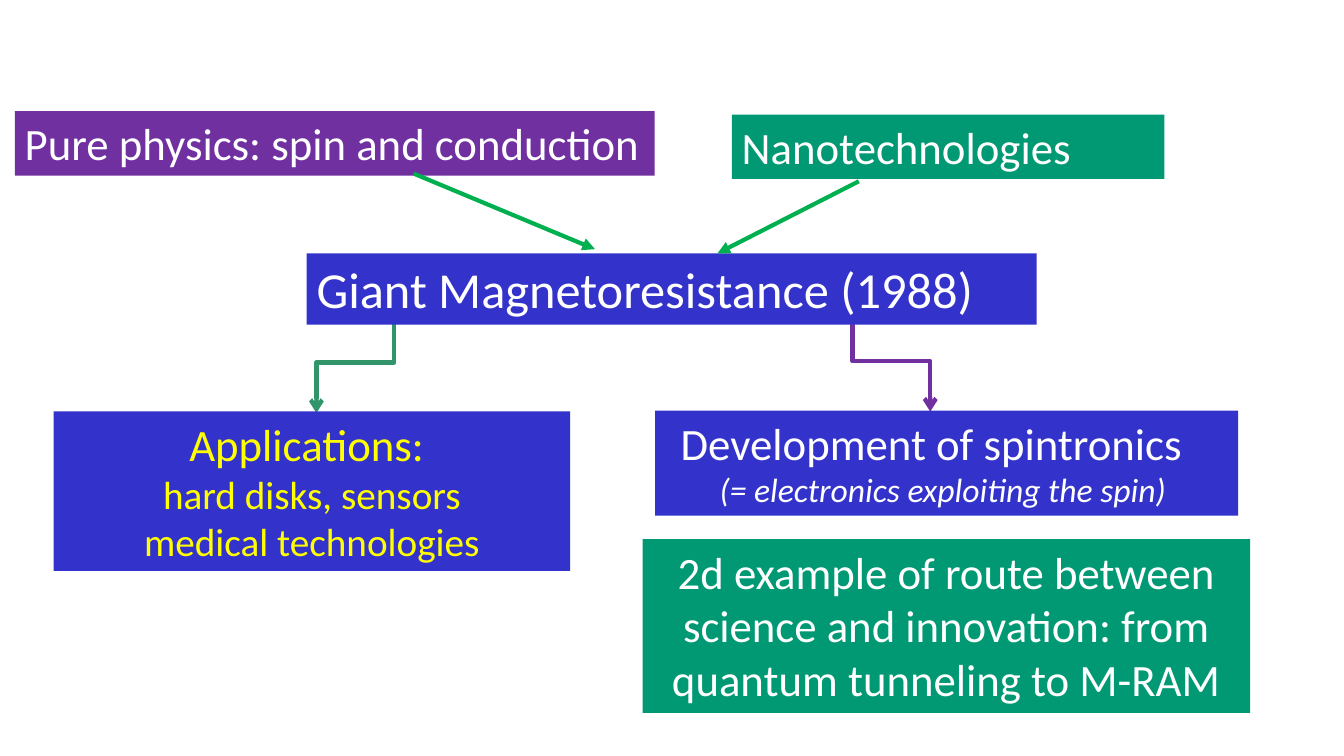
from dataclasses import dataclass

from lxml.etree import SubElement
from pptx import Presentation
from pptx.dml.color import RGBColor
from pptx.enum.shapes import MSO_CONNECTOR
from pptx.enum.text import MSO_AUTO_SIZE, PP_ALIGN
from pptx.oxml.ns import qn
from pptx.util import Pt


@dataclass(frozen=True)
class Theme:
    font: str = "Calibri"
    blue: str = "3333CC"
    purple: str = "7030A0"
    teal: str = "009973"
    sea_green: str = "32946A"
    bright_green: str = "00B050"
    white: str = "FFFFFF"
    yellow: str = "FFFF00"
    topic_size: int = 36
    heading_size: int = 32
    detail_size: int = 28
    note_size: int = 24
    line_width: int = 3


THEME = Theme()


def add_box(slide, left, top, width, height, fill, right_margin=7.2):
    shape = slide.shapes.add_textbox(Pt(left), Pt(top), Pt(width), Pt(height))
    shape.fill.solid()
    shape.fill.fore_color.rgb = RGBColor.from_string(fill)
    shape.text_frame.word_wrap = True
    shape.text_frame.auto_size = MSO_AUTO_SIZE.SHAPE_TO_FIT_TEXT
    shape.text_frame.margin_right = Pt(right_margin)
    return shape.text_frame


def write(frame, text, size=THEME.heading_size, color=THEME.white,
          italic=False, align=PP_ALIGN.CENTER, indent=0):
    paragraph = frame.paragraphs[-1]
    if paragraph.runs:
        paragraph = frame.add_paragraph()
    paragraph.alignment = align
    if indent:
        properties = paragraph._p.get_or_add_pPr()
        properties.set("marL", str(Pt(indent)))
        properties.set("indent", "0")
    run = paragraph.add_run()
    run.text = text
    run.font.name = THEME.font
    run.font.size = Pt(size)
    run.font.italic = italic
    run.font.color.rgb = RGBColor.from_string(color)


def style_connector(connector, color, head):
    connector.line.width = Pt(THEME.line_width)
    connector.line.color.rgb = RGBColor.from_string(color)
    SubElement(connector.line._get_or_add_ln(), qn("a:tailEnd"), type=head)
    SubElement(connector._element.spPr, qn("a:effectLst"))


def add_arrow(slide, start, end, color):
    connector = slide.shapes.add_connector(
        MSO_CONNECTOR.STRAIGHT, *map(Pt, start + end))
    style_connector(connector, color, "triangle")


def add_step_arrow(slide, start, end, color):
    across, down = end[0] - start[0], end[1] - start[1]
    center_x, center_y = (start[0] + end[0]) / 2, (start[1] + end[1]) / 2
    half_length, half_height = down / 2, abs(across) / 2
    if across > 0:
        half_length = -half_length
    connector = slide.shapes.add_connector(
        MSO_CONNECTOR.ELBOW,
        Pt(center_x - half_length), Pt(center_y - half_height),
        Pt(center_x + half_length), Pt(center_y + half_height))
    rotation = 270 if across > 0 else 90
    connector._element.spPr.xfrm.set("rot", str(rotation * 60000))
    style_connector(connector, color, "arrow")


def main():
    presentation = Presentation()
    presentation.slide_width = Pt(960)
    presentation.slide_height = Pt(540)
    slide = presentation.slides.add_slide(presentation.slide_layouts[6])

    add_step_arrow(slide, (281.5, 223), (226, 295), THEME.sea_green)
    add_step_arrow(slide, (609, 222), (664.5, 294), THEME.purple)

    discovery = add_box(slide, 219, 181, 521.5, 51, THEME.blue)
    write(discovery, "Giant Magnetoresistance (1988)",
          size=THEME.topic_size, align=PP_ALIGN.LEFT)

    spintronics = add_box(slide, 468, 293.3, 416.5, 75, THEME.blue,
                          right_margin=28.8)
    write(spintronics, "Development of spintronics")
    write(spintronics, "(= electronics exploiting the spin)",
          size=THEME.note_size, italic=True, indent=16.2)

    physics = add_box(slide, 10.6, 79.4, 457, 46, THEME.purple)
    write(physics, "Pure physics: spin and conduction", align=PP_ALIGN.LEFT)

    nanotechnologies = add_box(slide, 522.7, 81.8, 309, 46, THEME.teal)
    write(nanotechnologies, "Nanotechnologies", align=PP_ALIGN.LEFT)

    applications = add_box(slide, 38.3, 293.8, 369, 114, THEME.blue)
    write(applications, "Applications: ", color=THEME.yellow)
    for detail in ("hard disks, sensors", "medical technologies"):
        write(applications, detail, size=THEME.detail_size, color=THEME.yellow)

    add_arrow(slide, (295.5, 124), (425, 178), THEME.bright_green)
    add_arrow(slide, (613.5, 129.5), (512.5, 181), THEME.bright_green)

    innovation = add_box(slide, 459, 385.2, 434, 124, THEME.teal)
    write(innovation, "2d example of route between science and innovation: "
                      "from quantum tunneling to M-RAM")

    presentation.save("out.pptx")


if __name__ == "__main__":
    main()
